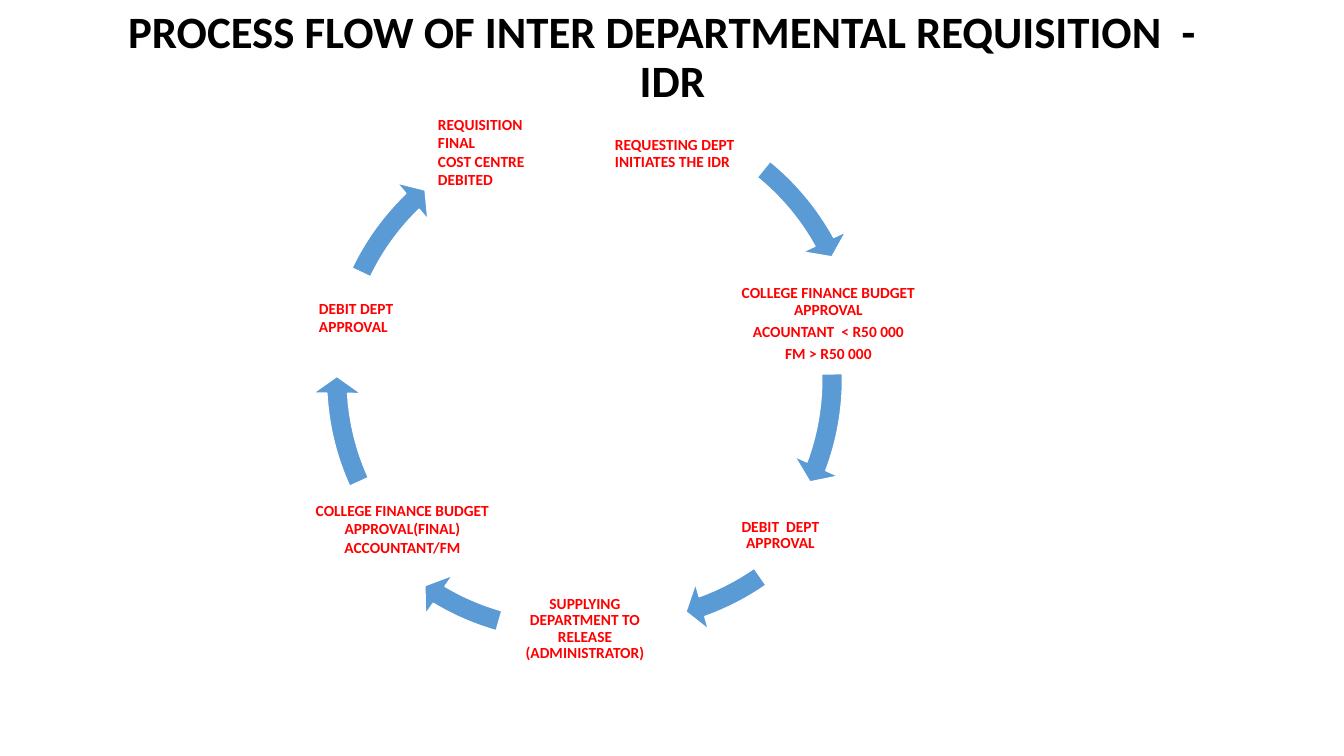
from dataclasses import dataclass

from pptx import Presentation
from pptx.dml.color import RGBColor
from pptx.enum.shapes import MSO_SHAPE
from pptx.enum.text import MSO_ANCHOR, MSO_AUTO_SIZE, PP_ALIGN
from pptx.util import Emu, Pt

BLACK = RGBColor(0x00, 0x00, 0x00)
RED = RGBColor(0xFF, 0x00, 0x00)
BLUE = RGBColor(0x5B, 0x9B, 0xD5)
WHITE = RGBColor(0xFF, 0xFF, 0xFF)

FONT = "Calibri"
EMU_PER_PX = 914400 / 100.8
RING_SIZE = 543
BAND_WIDTH = 0.038
HEAD_WIDTH = 0.044
HEAD_ANGLE = 3.91
ADJUSTMENT_PER_DEGREE = 0.6  # 60000 units per degree over a base of 100000


@dataclass(frozen=True)
class Step:
    lines: tuple[str, ...]
    box: tuple[int, int, int, int]
    align: PP_ALIGN = PP_ALIGN.CENTER
    in_cycle: bool = True  # tight, middle-anchored label of the cycle


@dataclass(frozen=True)
class FlowArrow:
    left: int
    top: int
    start: float  # degrees, clockwise from the right
    end: float


STEPS = (
    Step(("REQUESTING DEPT INITIATES THE IDR",), (613, 123, 160, 62), PP_ALIGN.LEFT),
    Step(("COLLEGE FINANCE BUDGET APPROVAL", "ACOUNTANT  < R50 000", "FM > R50 000"),
         (712, 274, 233, 100)),
    Step(("DEBIT  DEPT APPROVAL",), (728, 483, 105, 105)),
    Step(("SUPPLYING DEPARTMENT TO RELEASE (ADMINISTRATOR)",), (517, 577, 136, 104)),
    Step(("COLLEGE FINANCE BUDGET APPROVAL(FINAL)", "ACCOUNTANT/FM"),
         (288, 496, 229, 66), in_cycle=False),
    Step(("DEBIT DEPT APPROVAL",), (309, 294, 104, 47), PP_ALIGN.LEFT, False),
    Step(("REQUISITION FINAL", "COST CENTRE DEBITED"),
         (428, 110, 118, 85), PP_ALIGN.LEFT, False),
)

FLOW_ARROWS = (
    FlowArrow(336, 90, 309.1, 331.1),
    FlowArrow(313, 108, 358.7, 20.52),
    FlowArrow(347, 102, 55.12, 70.29),
    FlowArrow(295, 111, 105.81, 120.97),
    FlowArrow(313, 108, 155.57, 176.81),
    FlowArrow(313, 108, 205.62, 226.01),
)


def px(length: int) -> Emu:
    return Emu(round(length * EMU_PER_PX))


def write_text(frame, lines: tuple[str, ...], *, size: int, color: RGBColor,
               align: PP_ALIGN, anchor: MSO_ANCHOR, line_spacing: float = 1.0,
               space_after: int = 0, inset: tuple[int, int] = (10, 5)) -> None:
    frame.word_wrap = True
    frame.auto_size = MSO_AUTO_SIZE.NONE
    frame.vertical_anchor = anchor
    frame.margin_left = frame.margin_right = px(inset[0])
    frame.margin_top = frame.margin_bottom = px(inset[1])
    for index, line in enumerate(lines):
        paragraph = frame.add_paragraph() if index else frame.paragraphs[0]
        paragraph.alignment = align
        paragraph.line_spacing = line_spacing
        paragraph.space_after = Pt(space_after)
        run = paragraph.add_run()
        run.text = line
        run.font.name = FONT
        run.font.size = Pt(size)
        run.font.bold = True
        run.font.color.rgb = color


def add_step(slide, step: Step) -> None:
    label = slide.shapes.add_textbox(*map(px, step.box))
    if step.in_cycle:
        layout = dict(anchor=MSO_ANCHOR.MIDDLE, line_spacing=0.9,
                      space_after=4, inset=(2, 2))
    else:
        layout = dict(anchor=MSO_ANCHOR.TOP)
    write_text(label.text_frame, step.lines, size=11, color=RED,
               align=step.align, **layout)


def add_flow_arrow(slide, flow: FlowArrow) -> None:
    arrow = slide.shapes.add_shape(MSO_SHAPE.CIRCULAR_ARROW, px(flow.left), px(flow.top),
                                   px(RING_SIZE), px(RING_SIZE))
    angles = [degrees * ADJUSTMENT_PER_DEGREE
              for degrees in (HEAD_ANGLE, flow.end, flow.start)]
    for index, value in enumerate((BAND_WIDTH, *angles, HEAD_WIDTH)):
        arrow.adjustments[index] = value
    arrow.shadow.inherit = False
    arrow.fill.solid()
    arrow.fill.fore_color.rgb = BLUE
    arrow.line.color.rgb = WHITE
    arrow.line.width = Pt(1)


def main() -> None:
    presentation = Presentation()
    presentation.slide_width, presentation.slide_height = px(1344), px(756)
    slide = presentation.slides.add_slide(presentation.slide_layouts[5])

    # Heading
    title = slide.shapes.title
    title.left, title.top, title.width, title.height = map(px, (93, 30, 1159, 57))
    write_text(title.text_frame, ("PROCESS FLOW OF INTER DEPARTMENTAL REQUISITION  -   IDR",),
               size=32, color=BLACK, align=PP_ALIGN.CENTER,
               anchor=MSO_ANCHOR.MIDDLE, line_spacing=0.9)

    # Arrows around the cycle
    for flow in FLOW_ARROWS:
        add_flow_arrow(slide, flow)

    # Steps of the requisition
    for step in STEPS:
        add_step(slide, step)

    presentation.save("out.pptx")


if __name__ == "__main__":
    main()
